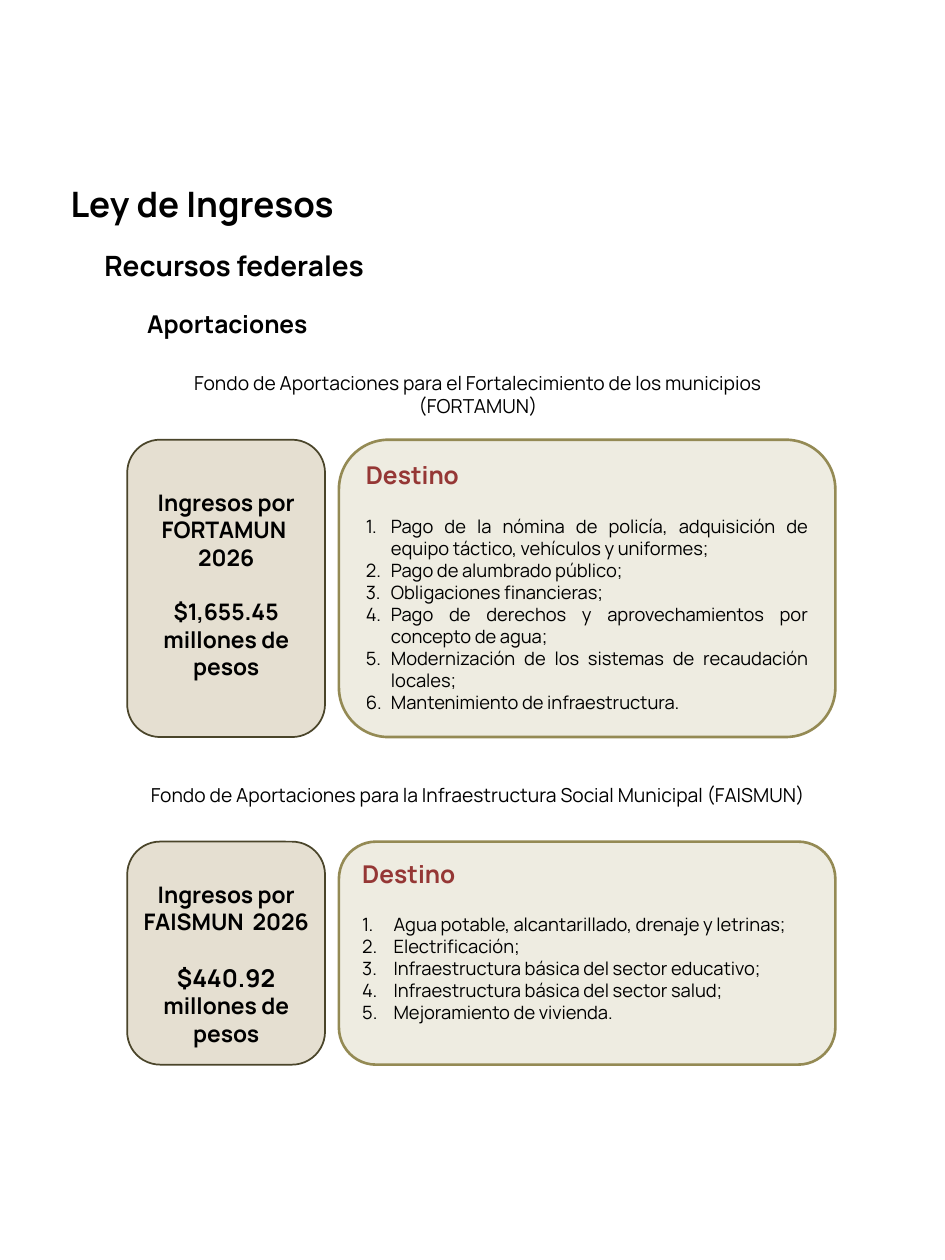
from lxml import etree
from pptx import Presentation
from pptx import util as u
from pptx.dml.color import RGBColor
from pptx.enum import shapes, text
from pptx.oxml.ns import qn

PX = 9144  # EMU, 100 px to the inch
FONT = "Manrope"
COLORS = {
    "ink": "000000",
    "heading": "953735",
    "income_fill": "E5DFD1",
    "income_line": "4A452A",
    "uses_fill": "EEECE1",
    "uses_line": "948A54",
}
CENTER, JUSTIFY, LEFT = text.PP_ALIGN.CENTER, text.PP_ALIGN.JUSTIFY, text.PP_ALIGN.LEFT

FUNDS = [
    {
        "caption": ["Fondo de Aportaciones para el Fortalecimiento de los municipios",
                    "(FORTAMUN)"],
        "caption_top": 290, "top": 349, "height": 236,
        "income": "Ingresos por FORTAMUN  2026", "income_top": 34,
        "amount": "$1,655.45", "amount_size": 13,
        "indent": 20, "align": JUSTIFY,
        "uses": ["Pago de la nómina de policía, adquisición de equipo táctico, "
                 "vehículos y uniformes;",
                 "Pago de alumbrado público;",
                 "Obligaciones financieras;",
                 "Pago de derechos y aprovechamientos por concepto de agua;",
                 "Modernización de los sistemas de recaudación locales;",
                 "Mantenimiento de infraestructura."],
    },
    {
        "caption": ["Fondo de Aportaciones para la Infraestructura Social Municipal (FAISMUN)"],
        "caption_top": 617, "top": 668, "height": 177,
        "income": "Ingresos por FAISMUN  2026", "income_top": 26,
        "amount": "$440.92", "amount_size": 14,
        "indent": 25, "align": LEFT,
        "uses": ["Agua potable, alcantarillado, drenaje y letrinas;",
                 "Electrificación;",
                 "Infraestructura básica del sector educativo;",
                 "Infraestructura básica del sector salud;",
                 "Mejoramiento de vivienda."],
    },
]


def px(*lengths):
    return [length * PX for length in lengths]


def style(paragraph, size, bold=False, color="ink", align=LEFT):
    paragraph.alignment = align
    for run in paragraph.runs:
        run.font.name = FONT
        run.font.size = u.Pt(size)
        run.font.bold = bold
        run.font.color.rgb = RGBColor.from_string(COLORS[color])


def number(paragraph, indent):
    """Give the paragraph an automatic number with a hanging indent."""
    properties = paragraph._p.get_or_add_pPr()
    properties.set("marL", str(indent * PX))
    properties.set("indent", str(-indent * PX))
    etree.SubElement(properties, qn("a:buFont"), typeface="+mj-lt")
    etree.SubElement(properties, qn("a:buAutoNum"), type="arabicPeriod")


def add_text(parent, box, lines, size, bold=False, align=LEFT):
    frame = parent.add_textbox(*px(*box)).text_frame
    frame.word_wrap = True
    frame.text = "\n".join(lines)
    for paragraph in frame.paragraphs:
        style(paragraph, size, bold, align=align)
    return frame


def add_panel(parent, box, kind, line_width):
    panel = parent.add_shape(shapes.MSO_SHAPE.ROUNDED_RECTANGLE, *px(*box))
    panel.shadow.inherit = False
    panel.fill.solid()
    panel.fill.fore_color.rgb = RGBColor.from_string(COLORS[kind + "_fill"])
    panel.line.color.rgb = RGBColor.from_string(COLORS[kind + "_line"])
    panel.line.width = u.Pt(line_width)
    return panel


def add_headings(slide, left, top):
    title = slide.shapes.title
    title.left, title.top, title.width, title.height = px(left, top, 615, 44)
    title.text_frame.text = "Ley de Ingresos"
    title.text_frame.vertical_anchor = text.MSO_ANCHOR.TOP
    style(title.text_frame.paragraphs[0], 20, True)
    add_text(slide.shapes, (left + 27, top + 52, 654, 37), ["Recursos federales"], 16, True)
    add_text(slide.shapes, (left + 61, top + 100, 156, 34), ["Aportaciones"], 14, True)


def add_income(slide, box, fund):
    left, top, width, height = box
    group = slide.shapes.add_group_shape().shapes
    add_panel(group, box, "income", 1)
    label_box = (left, top + fund["income_top"], width, height - 2 * fund["income_top"])
    lines = [fund["income"], fund["amount"]]
    frame = add_text(group, label_box, lines, 13, True, CENTER)
    amount = frame.paragraphs[1]
    amount.add_run().text = " millones de pesos"
    style(amount, 13, True, align=CENTER)
    amount.runs[0].font.size = u.Pt(fund["amount_size"])
    amount.space_before = u.Pt(15.6)


def add_uses(slide, box, fund):
    frame = add_panel(slide.shapes, box, "uses", 1.5).text_frame
    frame.word_wrap = True
    frame.vertical_anchor = text.MSO_ANCHOR.TOP
    frame.text = "\n".join(["Destino"] + fund["uses"])
    heading, *uses = frame.paragraphs
    style(heading, 14, True, "heading", JUSTIFY)
    heading.space_after = u.Pt(14.4)
    for use in uses:
        number(use, fund["indent"])
        style(use, 10.5, align=fund["align"])


def add_fund(slide, left, fund):
    top, height = fund["top"], fund["height"]
    add_text(slide.shapes, (left, fund["caption_top"], 557, 47), fund["caption"], 11,
             align=CENTER)
    add_income(slide, (left, top, 157, height), fund)
    add_uses(slide, (left + 168, top, 394, height), fund)


def main():
    deck = Presentation()
    deck.slide_width, deck.slide_height = px(750, 1000)
    slide = deck.slides.add_slide(deck.slide_layouts[5])
    add_headings(slide, 46, 140)
    for fund in FUNDS:
        add_fund(slide, 101, fund)
    deck.save("out.pptx")


if __name__ == "__main__":
    main()
